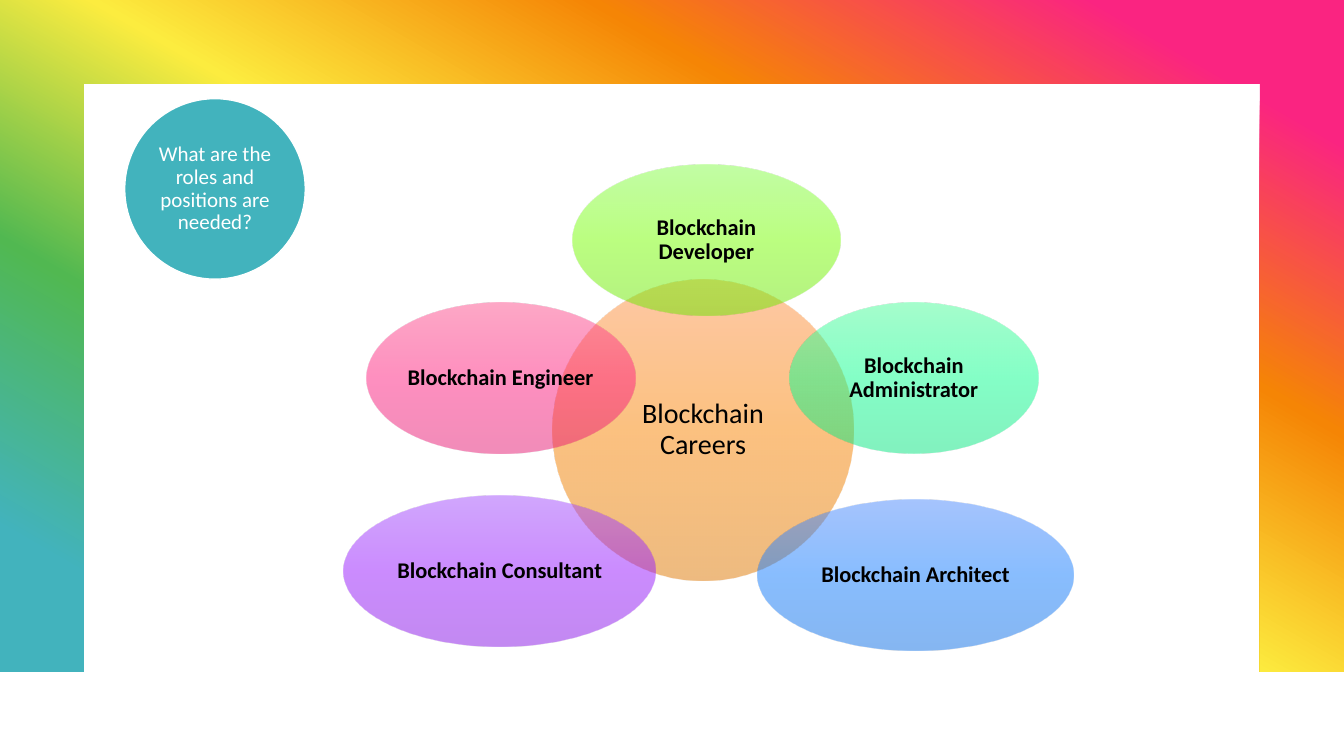
import lxml.etree
import pptx
import pptx.dml.color
import pptx.enum.shapes
import pptx.enum.text
import pptx.oxml.ns
import pptx.util

CELL = pptx.util.Inches(13.33 / 16)
PETAL_ROWS = 1.8
RAINBOW = [(10, "FA2481"), (30, "F58505"), (50, "FCEC3F"), (70, "51B851"), (90, "42B3BD")]
FRAME = [(0, 0), (16, 0), (16, 8.02), (15.01, 8.02), (15.01, 1.01),
         (1.01, 1.01), (1.01, 8.02), (0, 8.02)]
ROLES = [
    ("Blockchain Developer", 8.41, 2.86, 3.18, ("87FE4B", "77FF02", "69E500")),
    ("Blockchain Administrator", 10.88, 4.5, 2.96, ("4CFE9B", "09FF90", "06E580")),
    ("Blockchain Architect", 10.9, 6.85, 3.77, ("4D8BFD", "117BFF", "0C6DE5")),
    ("Blockchain Consultant", 5.95, 6.8, 3.71, ("A44FFD", "9918FF", "8813E5")),
    ("Blockchain Engineer", 5.96, 4.5, 3.2, ("FD518F", "FF1F80", "E51972")),
]


def grid(count):
    """Turn a number of grid cells into a length."""
    return pptx.util.Emu(round(count * CELL))


def paint(color_format, color):
    """Apply a hex colour."""
    color_format.rgb = pptx.dml.color.RGBColor.from_string(color)


def fill_gradient(shape, stops, angle, opacity=100):
    """Fill a shape with a linear gradient, its angle measured clockwise."""
    qn = pptx.oxml.ns.qn
    shape.fill.gradient()
    shape.fill.gradient_angle = 360 - angle
    stop_list = shape._element.spPr.find(qn("a:gradFill")).find(qn("a:gsLst"))
    for old_stop in list(stop_list):
        stop_list.remove(old_stop)
    for position, color in stops:
        stop = lxml.etree.SubElement(stop_list, qn("a:gs"), pos=str(position * 1000))
        tint = lxml.etree.SubElement(stop, qn("a:srgbClr"), val=color)
        if opacity < 100:
            lxml.etree.SubElement(tint, qn("a:alpha"), val=str(opacity * 1000))


def add_frame(page):
    """Draw the rainbow frame, open at the bottom."""
    builder = page.shapes.build_freeform(*FRAME[0], scale=CELL)
    builder.add_line_segments(FRAME[1:], close=True)
    frame = builder.convert_to_shape()
    frame.shadow.inherit = False
    frame.line.fill.background()
    fill_gradient(frame, RAINBOW, 120)


def add_oval(page, text, center, size, font_size, color="000000", bold=False):
    """Add an oval around a grid point with centred text."""
    column, row = center
    width, height = size
    oval = page.shapes.add_shape(
        pptx.enum.shapes.MSO_SHAPE.OVAL,
        grid(column - width / 2), grid(row - height / 2), grid(width), grid(height))
    oval.shadow.inherit = False
    oval.line.fill.background()
    box = oval.text_frame
    box.word_wrap = True
    box.vertical_anchor = pptx.enum.text.MSO_ANCHOR.MIDDLE
    box.margin_left = box.margin_right = pptx.util.Inches(0.02)
    box.margin_top = box.margin_bottom = pptx.util.Inches(0.02)
    para = box.paragraphs[0]
    para.alignment = pptx.enum.text.PP_ALIGN.CENTER
    para.line_spacing = 0.9
    span = para.add_run()
    span.text = text
    span.font.name = "Calibri"
    span.font.size = pptx.util.Pt(font_size)
    span.font.bold = bold
    paint(span.font.color, color)
    return oval


def add_glass_oval(page, colors, *details, **style):
    """Add a half-transparent oval shaded from top to bottom."""
    oval = add_oval(page, *details, **style)
    fill_gradient(oval, zip((0, 50, 100), colors), 90, opacity=50)


def add_question(page):
    """Add the solid circle that asks the question."""
    circle = add_oval(page, "What are the roles and positions are needed?",
                      (2.56, 2.25), (2.15, 2.15), 15, "FFFFFF")
    circle.fill.solid()
    paint(circle.fill.fore_color, "42B3BD")
    paint(circle.line.color, "FFFFFF")
    circle.line.width = pptx.util.Pt(1)


def main():
    """Build the slide and save it."""
    deck = pptx.Presentation()
    deck.slide_width = pptx.util.Inches(13.33)
    deck.slide_height = pptx.util.Inches(7.5)
    page = deck.slides.add_slide(deck.slide_layouts.get_by_name("Blank"))
    add_frame(page)
    add_glass_oval(page, ("FE934B", "FA8500", "DE7600"), "Blockchain Careers",
                   (8.37, 5.12), (3.59, 3.59), 20)
    for role, column, row, width, colors in ROLES:
        add_glass_oval(page, colors, role, (column, row), (width, PETAL_ROWS), 16, bold=True)
    add_question(page)
    deck.save("out.pptx")


if __name__ == "__main__":
    main()
